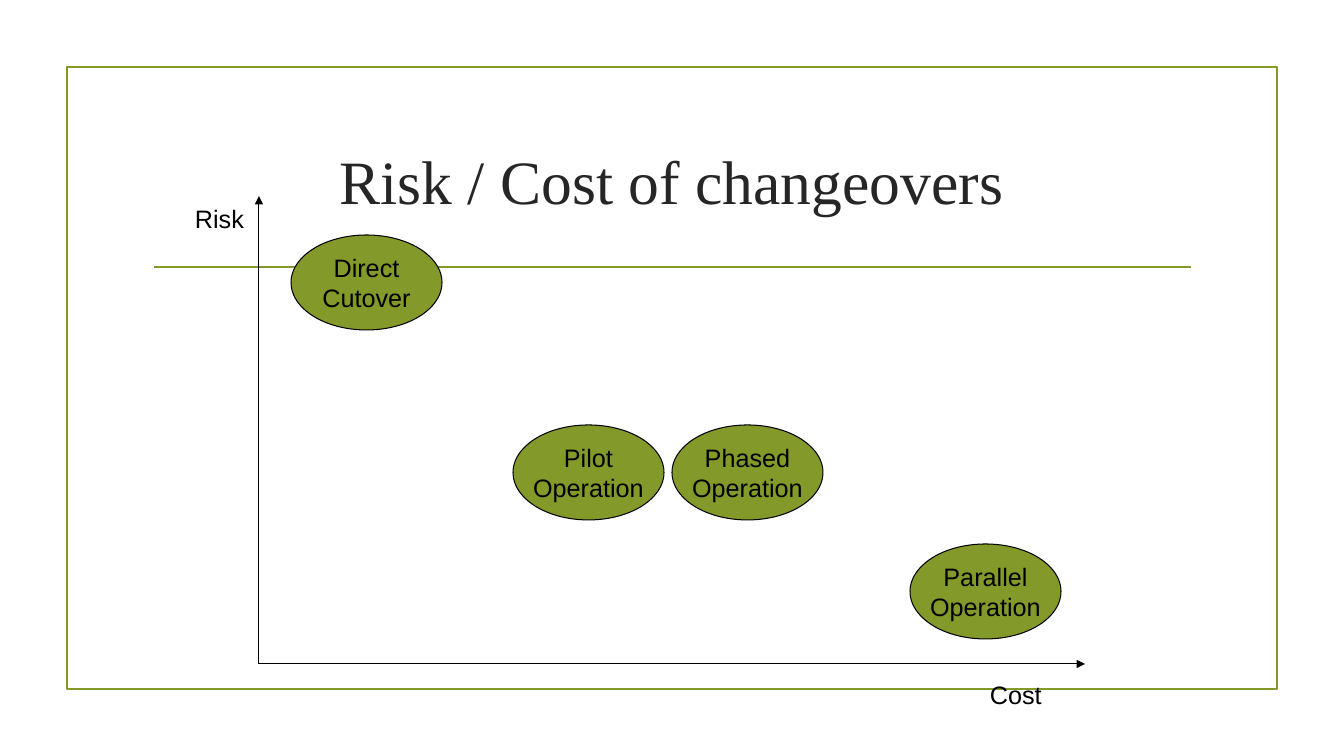
from lxml.etree import SubElement
from pptx import Presentation
from pptx.dml.color import RGBColor
from pptx.enum.shapes import MSO_CONNECTOR, MSO_SHAPE
from pptx.enum.text import MSO_ANCHOR, MSO_AUTO_SIZE, PP_ALIGN
from pptx.oxml.ns import qn
from pptx.util import Emu, Pt

EMU_PER_PX = 914400 / 100.8
COLORS = {"olive": "83992A", "ink": "262626", "black": "000000"}
FONTS = {
    "title": {"name": "Times New Roman", "size": Pt(44)},
    "label": {"name": "Arial", "size": Pt(18)},
}
OVAL_SIZE = (151, 95)
CHANGEOVERS = [
    (32, 39, "Direct\nCutover"),
    (254, 229, "Pilot\nOperation"),
    (413, 229, "Phased\nOperation"),
    (651, 348, "Parallel\nOperation"),
]
AXIS_LABELS = [(-74, 2, 70, "Risk"), (721, 478, 73, "Cost")]


def px(*lengths):
    """Turn pixel lengths into EMU."""
    return [Emu(round(length * EMU_PER_PX)) for length in lengths]


def rgb(color):
    """Look up a named colour."""
    return RGBColor.from_string(COLORS[color])


def style_line(line, color, width):
    """Give a line its colour and width in points."""
    line.color.rgb = rgb(color)
    line.width = Pt(width)


def write(frame, text, font, color, align, **frame_format):
    """Fill a text frame with evenly formatted paragraphs."""
    frame.text = text
    for key, value in frame_format.items():
        setattr(frame, key, value)
    for paragraph in frame.paragraphs:
        paragraph.alignment = align
        paragraph.font.color.rgb = rgb(color)
        for key, value in FONTS[font].items():
            setattr(paragraph.font, key, value)


def add_line(slide, start, end, color, width, arrow=False):
    """Draw a straight line, with an arrowhead at its end if asked."""
    connector = slide.shapes.add_connector(MSO_CONNECTOR.STRAIGHT, *px(*start, *end))
    style_line(connector.line, color, width)
    if arrow:
        SubElement(connector.line._get_or_add_ln(), qn("a:tailEnd"), type="triangle")
    SubElement(connector._element.spPr, qn("a:effectLst"))


def add_border(slide, left, top, width, height):
    """Draw the olive border and the rule below the title."""
    border = slide.shapes.add_shape(MSO_SHAPE.RECTANGLE, *px(left, top, width, height))
    border.shadow.inherit = False
    border.fill.background()
    style_line(border.line, "olive", 1.25)
    rule_y = top + 200
    add_line(slide, (left + 87, rule_y), (left + width - 86, rule_y), "olive", 1.25)


def add_heading(slide, left, top, width, height):
    """Place and format the slide title."""
    heading = slide.shapes.title
    heading.left, heading.top, heading.width, heading.height = px(left, top, width, height)
    write(heading.text_frame, "Risk / Cost of changeovers", "title", "ink", PP_ALIGN.CENTER,
          vertical_anchor=MSO_ANCHOR.MIDDLE, auto_size=MSO_AUTO_SIZE.NONE)


def add_risk_cost_plot(slide, left, top, width, height):
    """Draw the axes, their labels and the changeover methods."""
    origin = (left, top + height)
    for axis_end in ((left, top), (left + width, top + height)):
        add_line(slide, origin, axis_end, "black", 0.75, arrow=True)
    for x, y, label_width, text in AXIS_LABELS:
        label = slide.shapes.add_textbox(*px(left + x, top + y, label_width, 40))
        write(label.text_frame, text, "label", "black", PP_ALIGN.LEFT,
              word_wrap=False, auto_size=MSO_AUTO_SIZE.SHAPE_TO_FIT_TEXT)
    for x, y, text in CHANGEOVERS:
        method = slide.shapes.add_shape(MSO_SHAPE.OVAL, *px(left + x, top + y, *OVAL_SIZE))
        method.shadow.inherit = False
        method.fill.solid()
        method.fill.fore_color.rgb = rgb("olive")
        style_line(method.line, "black", 0.75)
        write(method.text_frame, text, "label", "black", PP_ALIGN.CENTER,
              word_wrap=False, vertical_anchor=MSO_ANCHOR.MIDDLE)


def main():
    """Build and save the slide."""
    deck = Presentation()
    deck.slide_width, deck.slide_height = px(1344, 756)
    slide = deck.slides.add_slide(deck.slide_layouts[5])
    add_border(slide, 67, 67, 1210, 622)
    add_heading(slide, 143, 108, 1058, 144)
    add_risk_cost_plot(slide, 259, 196, 826, 468)
    deck.save("out.pptx")


if __name__ == "__main__":
    main()
